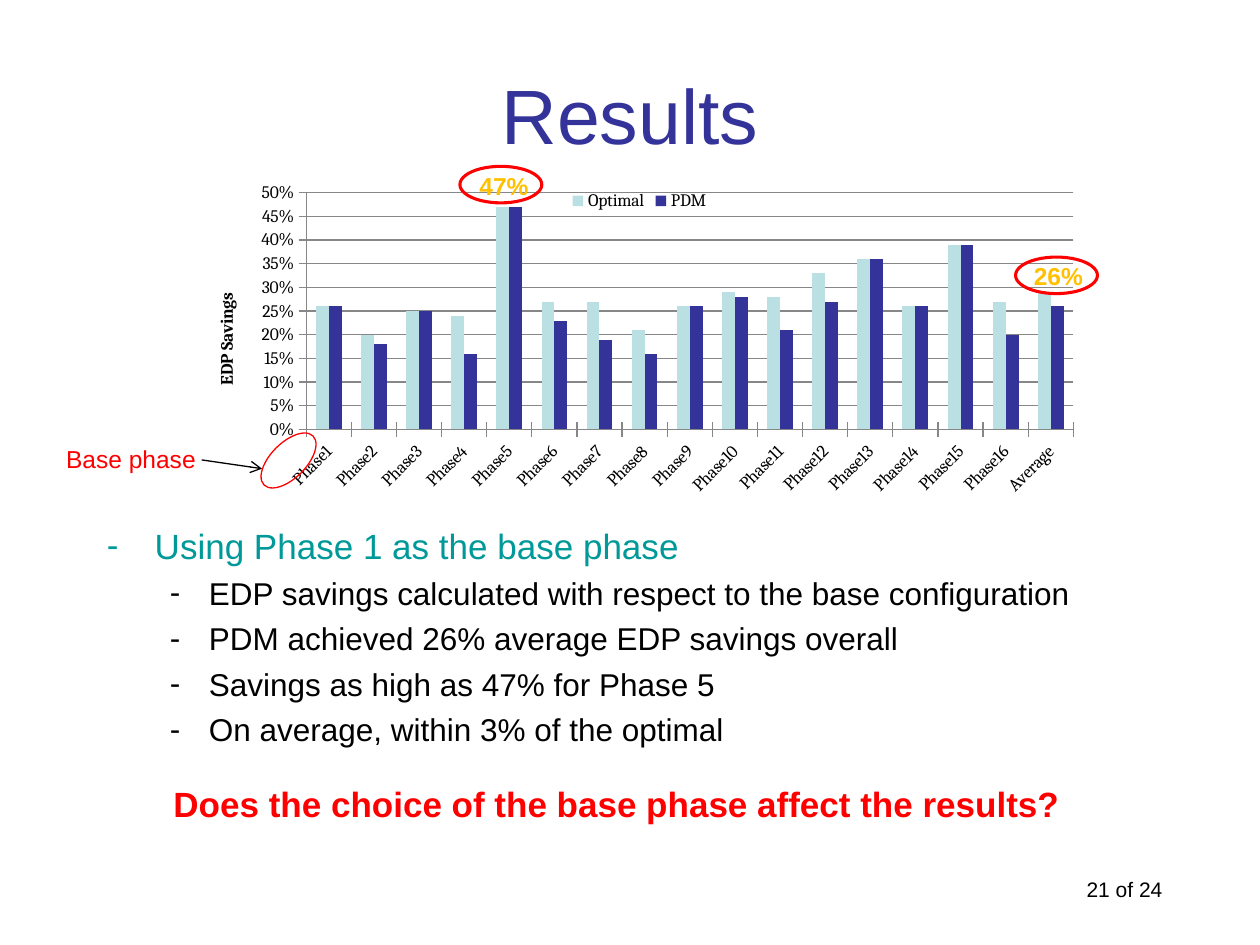
import pptx
import pptx.chart.data
import pptx.dml.color
import pptx.enum.chart
import pptx.enum.shapes
import pptx.enum.text
import pptx.oxml
import pptx.oxml.ns
import pptx.util
from lxml import etree

Inches, Pt = pptx.util.Inches, pptx.util.Pt
RGBColor = pptx.dml.color.RGBColor
ALIGN = pptx.enum.text.PP_ALIGN
ANCHOR = pptx.enum.text.MSO_ANCHOR
qn = pptx.oxml.ns.qn

BLACK = RGBColor(0x00, 0x00, 0x00)
RED = RGBColor(0xFF, 0x00, 0x00)
NAVY = RGBColor(0x33, 0x33, 0x99)
TEAL = RGBColor(0x00, 0x99, 0x99)
PALE_BLUE = RGBColor(0xBB, 0xE0, 0xE3)
GOLD = RGBColor(0xFF, 0xC0, 0x00)
GRAY = RGBColor(0x87, 0x87, 0x87)

CHART_WIDTH, CHART_HEIGHT = 7.17, 2.58
CATEGORIES = [f"Phase{number}" for number in range(1, 17)] + ["Average"]
SERIES = [
    ("Optimal", PALE_BLUE, [0.26, 0.2, 0.25, 0.24, 0.47, 0.27, 0.27, 0.21, 0.26,
                            0.29, 0.28, 0.33, 0.36, 0.26, 0.39, 0.27, 0.29]),
    ("PDM", NAVY, [0.26, 0.18, 0.25, 0.16, 0.47, 0.23, 0.19, 0.16, 0.26,
                   0.28, 0.21, 0.27, 0.36, 0.26, 0.39, 0.2, 0.26]),
]
# level, text
BULLETS = [
    (0, "Using Phase 1 as the base phase"),
    (1, "EDP savings calculated with respect to the base configuration"),
    (1, "PDM achieved 26% average EDP savings overall"),
    (1, "Savings as high as 47% for Phase 5"),
    (1, "On average, within 3% of the optimal"),
]
# size, colour, text indent, hanging indent for each level
LEVELS = [(20, TEAL, 0.38, 0.38), (18, BLACK, 0.81, 0.31)]
# text, (left, top, width, height), size, colour, bold, wrap
LABELS = [
    ("21 of 24", (8.29, 6.91, 1.27, 0.3), 12, BLACK, False, True),
    ("Results", (0.75, 0.28, 8.5, 1.25), 44, NAVY, False, True),
    ("Base phase", (0.42, 3.47, 1.24, 0.34), 14, RED, False, False),
    ("26%", (8.06, 2.02, 0.68, 0.34), 14, GOLD, True, True),
    ("47%", (3.66, 1.3, 0.68, 0.34), 14, GOLD, True, True),
    ("Does the choice of the base phase affect the results?",
     (1.25, 6.16, 7.29, 0.44), 20, RED, True, False),
]
# (left, top, width, height), line width, rotation
RINGS = [
    ((2.15, 3.38, 0.28, 0.55), 0.75, 45),
    ((8.06, 2.04, 0.65, 0.29), 1.75, 0),
    ((3.65, 1.32, 0.65, 0.29), 1.75, 0),
]


def style(font, size, color, bold=False, name="Arial"):
    font.name, font.size, font.bold = name, Pt(size), bold
    font.color.rgb = color


def add_label(page, text, place, size, color, bold, wrap):
    box = page.shapes.add_textbox(*map(Inches, place))
    frame = box.text_frame
    frame.word_wrap = wrap
    frame.vertical_anchor = ANCHOR.MIDDLE
    frame.text = text
    paragraph = frame.paragraphs[0]
    paragraph.alignment = ALIGN.CENTER
    style(paragraph.runs[0].font, size, color, bold)


def add_bullets(page):
    box = page.shapes.add_textbox(Inches(0.75), Inches(4.11), Inches(8.5), Inches(1.95))
    frame = box.text_frame
    frame.word_wrap = True
    for index, (level, text) in enumerate(BULLETS):
        paragraph = frame.paragraphs[0] if index == 0 else frame.add_paragraph()
        size, color, indent, hanging = LEVELS[level]
        paragraph.text = text
        paragraph.level = level
        if index:
            paragraph.space_before = Pt(4.4)
        properties = paragraph._p.get_or_add_pPr()
        properties.set("marL", str(Inches(indent)))
        properties.set("indent", str(-Inches(hanging)))
        etree.SubElement(properties, qn("a:buFont")).set("typeface", "Arial")
        etree.SubElement(properties, qn("a:buChar")).set("char", "-")
        style(paragraph.runs[0].font, size, color)


def set_layout(element, left, top, width=None, height=None, inner=False):
    """Place a chart part, in inches from the chart's corner."""
    for old in element.findall(qn("c:layout")):
        element.remove(old)
    layout = etree.Element(qn("c:layout"))
    manual = etree.SubElement(layout, qn("c:manualLayout"))
    if inner:
        etree.SubElement(manual, qn("c:layoutTarget")).set("val", "inner")
    for tag in ("xMode", "yMode"):
        etree.SubElement(manual, qn(f"c:{tag}")).set("val", "edge")
    for tag, length, whole in (("x", left, CHART_WIDTH), ("y", top, CHART_HEIGHT),
                               ("w", width, CHART_WIDTH), ("h", height, CHART_HEIGHT)):
        if length is not None:
            etree.SubElement(manual, qn(f"c:{tag}")).set("val", f"{length / whole:.4f}")
    before = [child for child in element
              if child.tag in (qn("c:tx"), qn("c:legendPos"))]
    element.insert(len(before), layout)


def add_savings_chart(page):
    data = pptx.chart.data.CategoryChartData(number_format="0%")
    data.categories = CATEGORIES
    for name, _, values in SERIES:
        data.add_series(name, values)
    chart = page.shapes.add_chart(
        pptx.enum.chart.XL_CHART_TYPE.COLUMN_CLUSTERED, Inches(1.5), Inches(1.41),
        Inches(CHART_WIDTH), Inches(CHART_HEIGHT), data).chart
    style(chart.font, 10, BLACK, name="Cambria")
    chart.has_title = False

    plot = chart.plots[0]
    plot.gap_width, plot.overlap, plot.vary_by_categories = 150, 0, False
    for series, (_, color, _) in zip(plot.series, SERIES):
        series.format.fill.solid()
        series.format.fill.fore_color.rgb = color

    category_axis, value_axis = chart.category_axis, chart.value_axis
    for axis in (category_axis, value_axis):
        axis.major_tick_mark = pptx.enum.chart.XL_TICK_MARK.CROSS
        axis.format.line.color.rgb = GRAY
        style(axis.tick_labels.font, 10, BLACK, name="Cambria")
    category_axis._element.find(qn("c:txPr")).find(qn("a:bodyPr")).set("rot", "-2700000")
    value_axis.minimum_scale, value_axis.maximum_scale = 0, 0.5
    value_axis.major_unit = 0.05
    value_axis.major_gridlines.format.line.color.rgb = GRAY
    value_axis.tick_labels.number_format = "0%"
    value_axis.tick_labels.number_format_is_linked = False
    title = value_axis.axis_title
    title.text_frame.text = "EDP Savings"
    style(title.text_frame.paragraphs[0].runs[0].font, 10, BLACK, True, "Cambria")
    title.text_frame._txBody.find(qn("a:bodyPr")).set("rot", "-5400000")
    set_layout(title._element, 0.18, 0.89)

    chart.has_legend = True
    legend = chart.legend
    legend.position = pptx.enum.chart.XL_LEGEND_POSITION.TOP
    legend.include_in_layout = False
    legend._element.find(qn("c:overlay")).set("val", "1")
    style(legend.font, 10, BLACK, name="Cambria")
    set_layout(legend._element, 3, 0.09, 1.15, 0.19)
    plot_area = chart._chartSpace.chart.plotArea
    set_layout(plot_area, 0.93, 0.12, 6.09, 1.88, inner=True)


def add_ring(page, place, width, rotation):
    ring = page.shapes.add_shape(pptx.enum.shapes.MSO_SHAPE.OVAL, *map(Inches, place))
    ring.shadow.inherit = False
    ring.fill.background()
    ring.line.color.rgb = RED
    ring.line.width = Pt(width)
    ring.rotation = rotation


def add_arrow(page):
    arrow = page.shapes.add_connector(
        pptx.enum.shapes.MSO_CONNECTOR.STRAIGHT,
        Inches(1.6), Inches(3.65), Inches(2.08), Inches(3.72))
    arrow.line.color.rgb = BLACK
    arrow.line.width = Pt(0.75)
    etree.SubElement(arrow.line._get_or_add_ln(), qn("a:tailEnd")).set("type", "arrow")
    etree.SubElement(arrow._element.spPr, qn("a:effectLst"))


def main():
    deck = pptx.Presentation()
    deck.slide_width, deck.slide_height = Inches(10), Inches(7.5)
    page = deck.slides.add_slide(deck.slide_layouts[6])
    add_savings_chart(page)
    add_bullets(page)
    add_arrow(page)
    for label in LABELS:
        add_label(page, *label)
    for ring in RINGS:
        add_ring(page, *ring)
    deck.save("out.pptx")


if __name__ == "__main__":
    main()
